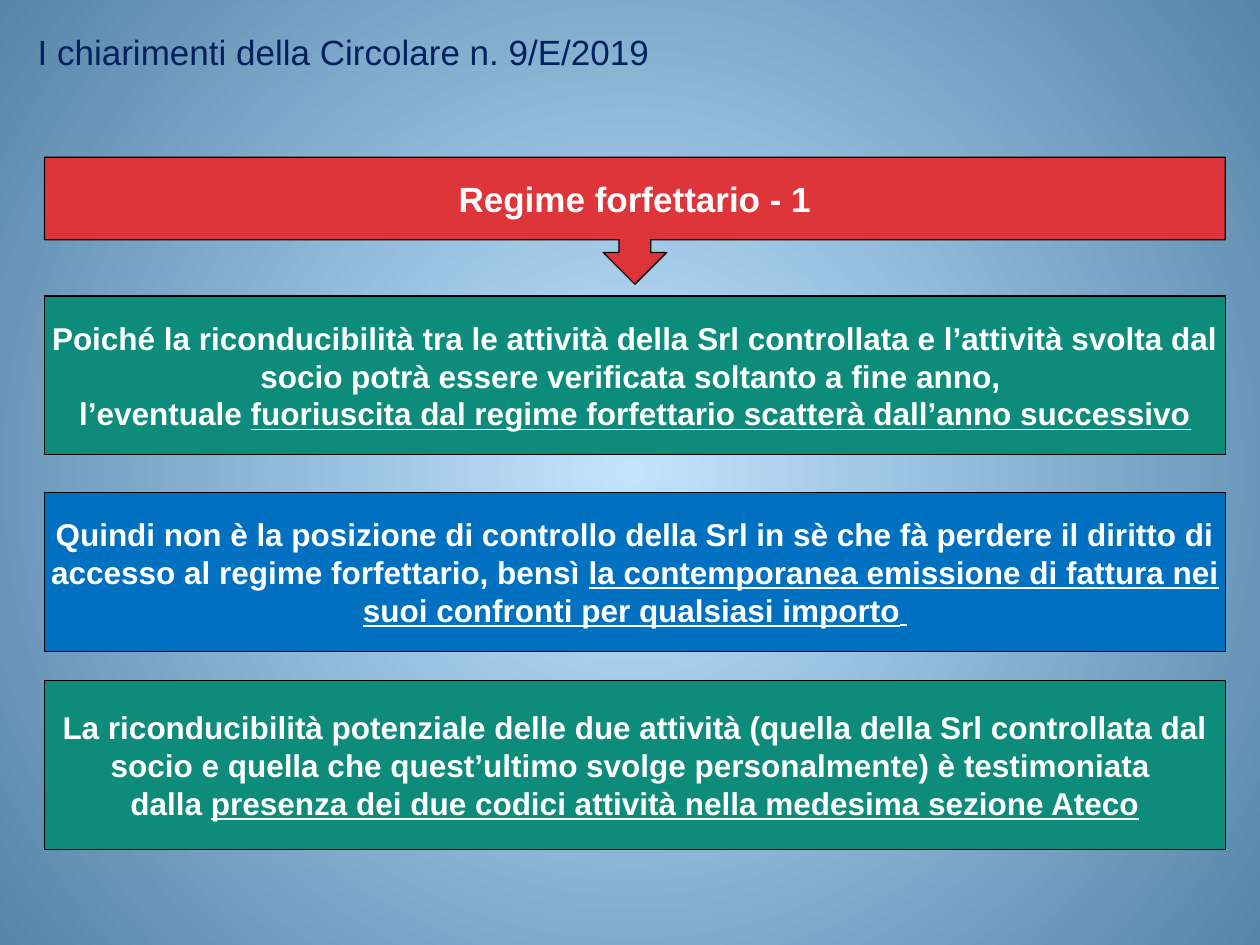
from lxml.etree import SubElement
from pptx import Presentation
from pptx.dml.color import RGBColor
from pptx.enum.shapes import MSO_SHAPE
from pptx.enum.text import MSO_ANCHOR, PP_ALIGN
from pptx.oxml.ns import qn
from pptx.util import Cm, Pt


def color(hex_string):
    return RGBColor.from_string(hex_string)


def write_text(shape, paragraphs, size=18, text_color="FFFFFF", bold=True,
               align=PP_ALIGN.CENTER, side_inset=0.13):
    """Each paragraph is a list of (text, underlined) or (text, underlined, size)."""
    frame = shape.text_frame
    frame.word_wrap = True
    frame.vertical_anchor = MSO_ANCHOR.MIDDLE
    frame.margin_left = frame.margin_right = Cm(side_inset)
    frame.margin_top = frame.margin_bottom = Cm(0.13)
    for index, pieces in enumerate(paragraphs):
        paragraph = frame.add_paragraph() if index else frame.paragraphs[0]
        paragraph.alignment = align
        for text, underlined, *own_size in pieces:
            run = paragraph.add_run()
            run.text = text
            font = run.font
            font.name = "Arial"
            font.size = Pt(own_size[0] if own_size else size)
            font.bold = bold
            font.color.rgb = color(text_color)
            if underlined:
                font.underline = True


presentation = Presentation()
presentation.slide_width, presentation.slide_height = Cm(25.4), Cm(19.05)
slide = presentation.slides.add_slide(presentation.slide_layouts[6])

# Background: radial gradient from the centre
background = slide.background.fill
background.gradient()
for stop, stop_color in zip(background.gradient_stops, ("C2E4FF", "5685A9")):
    stop.color.rgb = color(stop_color)
gradient = slide.element.find(".//" + qn("a:gradFill"))
gradient.remove(gradient.find(qn("a:lin")))
radial = SubElement(gradient, qn("a:path"), path="circle")
SubElement(radial, qn("a:fillToRect"), l="50000", t="50000", r="50000", b="50000")

# Title
title = slide.shapes.add_textbox(Cm(0.51), Cm(0.56), Cm(16.31), Cm(0.97))
write_text(title, [[("I chiarimenti della Circolare n. 9/E/2019", False)]], size=20,
           text_color="002060", bold=False, align=PP_ALIGN.LEFT, side_inset=0.25)

# Heading with arrow, then the three statements: kind, top, height, fill, size, text
RED, GREEN, BLUE = "DE353A", "0D8B7B", "0070C0"
boxes = [
    (MSO_SHAPE.DOWN_ARROW_CALLOUT, 3.17, 2.56, RED, 20,
     [[("Regime forfettario - 1", False)]]),
    (MSO_SHAPE.RECTANGLE, 5.97, 3.2, GREEN, 18,
     [[("Poiché la riconducibilità tra le attività della Srl controllata e l’attività "
        "svolta dal socio potrà essere verificata soltanto a fine anno, ", False)],
      [("l’eventuale ", False),
       ("fuoriuscita dal regime forfettario scatterà dall’anno successivo", True)]]),
    (MSO_SHAPE.RECTANGLE, 9.93, 3.2, BLUE, 18,
     [[("Quindi non è la posizione di controllo della Srl in sè che fà perdere il "
        "diritto di accesso al regime forfettario, bensì ", False),
       ("la contemporanea emissione di fattura nei suoi confronti per qualsiasi "
        "importo", True),
       (" ", True, 14)]]),
    (MSO_SHAPE.RECTANGLE, 13.72, 3.4, GREEN, 18,
     [[("La riconducibilità potenziale delle due attività (quella della Srl controllata "
        "dal socio e quella che quest’ultimo svolge personalmente) è testimoniata ", False)],
      [("dalla ", False),
       ("presenza dei due codici attività nella medesima sezione Ateco", True)]]),
]
for kind, top, height, fill_color, size, paragraphs in boxes:
    box = slide.shapes.add_shape(kind, Cm(0.9), Cm(top), Cm(23.8), Cm(height))
    box.shadow.inherit = False
    box.fill.solid()
    box.fill.fore_color.rgb = color(fill_color)
    box.line.color.rgb = color("000000")
    box.line.width = Pt(0.75)
    write_text(box, paragraphs, size=size)

presentation.save("out.pptx")
